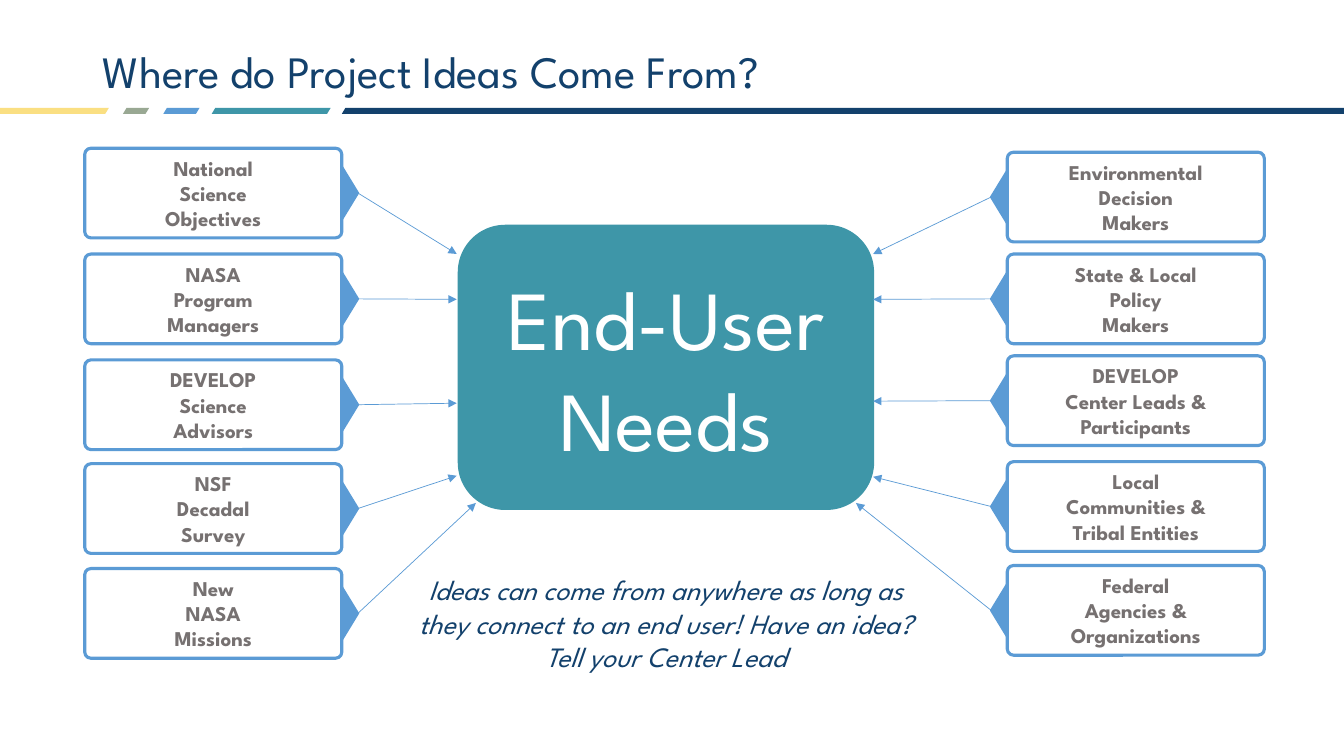
from lxml import etree
from pptx import Presentation
from pptx.dml.color import RGBColor
from pptx.enum.shapes import MSO_CONNECTOR, MSO_SHAPE
from pptx.enum.text import MSO_ANCHOR, PP_ALIGN
from pptx.oxml.ns import qn
from pptx.util import Inches, Pt

NAVY = RGBColor(0x13, 0x41, 0x6C)
TEAL = RGBColor(0x3E, 0x96, 0xA8)
BLUE = RGBColor(0x5B, 0x9B, 0xD5)
SAGE = RGBColor(0x99, 0xA8, 0x93)
YELLOW = RGBColor(0xFA, 0xDF, 0x82)
GRAY = RGBColor(0x76, 0x71, 0x71)
WHITE = RGBColor(0xFF, 0xFF, 0xFF)
FONT = "League Spartan"
CENTER, LEFT = PP_ALIGN.CENTER, PP_ALIGN.LEFT
MIDDLE, TOP = MSO_ANCHOR.MIDDLE, MSO_ANCHOR.TOP
PARALLELOGRAM = MSO_SHAPE.PARALLELOGRAM
ROUNDED = MSO_SHAPE.ROUNDED_RECTANGLE
TRIANGLE = MSO_SHAPE.ISOSCELES_TRIANGLE
STRAIGHT = MSO_CONNECTOR.STRAIGHT

presentation = Presentation()
presentation.slide_width = Inches(13.33)
presentation.slide_height = Inches(7.5)
slide = presentation.slides.add_slide(presentation.slide_layouts[6])


def add_filled_shape(kind, left, top, width, height, fill, line=None, line_width=1):
    shape = slide.shapes.add_shape(
        kind, Inches(left), Inches(top), Inches(width), Inches(height))
    shape.shadow.inherit = False
    shape.fill.solid()
    shape.fill.fore_color.rgb = fill
    if line is None:
        shape.line.fill.background()
    else:
        shape.line.color.rgb = line
        shape.line.width = Pt(line_width)
    return shape


def write_text(shape, text, size, color, align=CENTER, anchor=MIDDLE,
               bold=False, italic=False, spacing=1.0):
    """Fill a shape with one paragraph per line of text."""
    frame = shape.text_frame
    frame.word_wrap = True
    frame.vertical_anchor = anchor
    frame.text = text
    for paragraph in frame.paragraphs:
        paragraph.alignment = align
        paragraph.line_spacing = spacing
        paragraph.font.name = FONT
        paragraph.font.size = Pt(size)
        paragraph.font.bold = bold
        paragraph.font.italic = italic
        paragraph.font.color.rgb = color


# Title and the divider below it
for left, width, color in [(-0.04, 1.12, YELLOW), (1.22, 0.26, SAGE), (1.62, 0.36, BLUE),
                           (2.1, 1.18, TEAL), (3.39, 9.98, NAVY)]:
    bar = add_filled_shape(PARALLELOGRAM, left, 1.07, width, 0.06, color)
    bar.adjustments[0] = 0.6

title = slide.shapes.add_textbox(Inches(0.92), Inches(0.4), Inches(11.5), Inches(0.67))
write_text(title, "Where do Project Ideas Come From?", 32, NAVY, align=LEFT, spacing=0.9)

# Central need
needs = add_filled_shape(ROUNDED, 4.54, 2.23, 4.13, 2.83, TEAL)
write_text(needs, "End-User Needs", 60, WHITE)

# Idea sources: box top, text, arrow end
LEFT_SOURCES = [
    (1.47, "National\nScience\nObjectives", (4.53, 2.52)),
    (2.52, "NASA\nProgram\nManagers", (4.53, 2.97)),
    (3.57, "DEVELOP\nScience\nAdvisors", (4.53, 4.0)),
    (4.6, "NSF\nDecadal\nSurvey", (4.53, 4.72)),
    (5.64, "New\nNASA\nMissions", (4.72, 4.99)),
]
RIGHT_SOURCES = [
    (1.51, "Environmental\nDecision\nMakers", (8.66, 2.52)),
    (2.52, "State & Local\nPolicy\nMakers", (8.66, 2.97)),
    (3.53, "DEVELOP\nCenter Leads & Participants", (8.66, 3.98)),
    (4.58, "Local\nCommunities &\nTribal Entities", (8.66, 4.73)),
    (5.61, "Federal\nAgencies &\nOrganizations", (8.49, 4.99)),
]
BOX_WIDTH, BOX_HEIGHT = 2.55, 0.89
POINTER_BASE, POINTER_DEPTH = 0.82, 0.25

# Each side: sources, box left, pointer left, pointer rotation, pointer tip
for sources, box_left, pointer_left, rotation, tip in [
        (LEFT_SOURCES, 0.84, 3.02, 90, 3.55), (RIGHT_SOURCES, 9.99, 9.54, 270, 9.83)]:
    for top, text, (end_x, end_y) in sources:
        middle = top + BOX_HEIGHT / 2
        pointer = add_filled_shape(TRIANGLE, pointer_left, middle - POINTER_DEPTH / 2,
                                   POINTER_BASE, POINTER_DEPTH, BLUE, BLUE)
        pointer.rotation = rotation

        box = add_filled_shape(ROUNDED, box_left, top, BOX_WIDTH, BOX_HEIGHT,
                               WHITE, BLUE, 2.25)
        box.adjustments[0] = 0.07
        write_text(box, text, 15, GRAY, bold=True)

        arrow = slide.shapes.add_connector(
            STRAIGHT, Inches(tip), Inches(middle), Inches(end_x), Inches(end_y))
        arrow.line.color.rgb = BLUE
        arrow.line.width = Pt(0.5)
        etree.SubElement(arrow.line._get_or_add_ln(), qn("a:tailEnd"), type="triangle")
        etree.SubElement(arrow._element.spPr, qn("a:effectLst"))

# Closing remark
remark = slide.shapes.add_textbox(Inches(3.99), Inches(5.63), Inches(5.23), Inches(1.11))
write_text(remark, "Ideas can come from anywhere as long as they connect to an end user! "
           "Have an idea? Tell your Center Lead", 20, NAVY, anchor=TOP, italic=True)

presentation.save("out.pptx")
